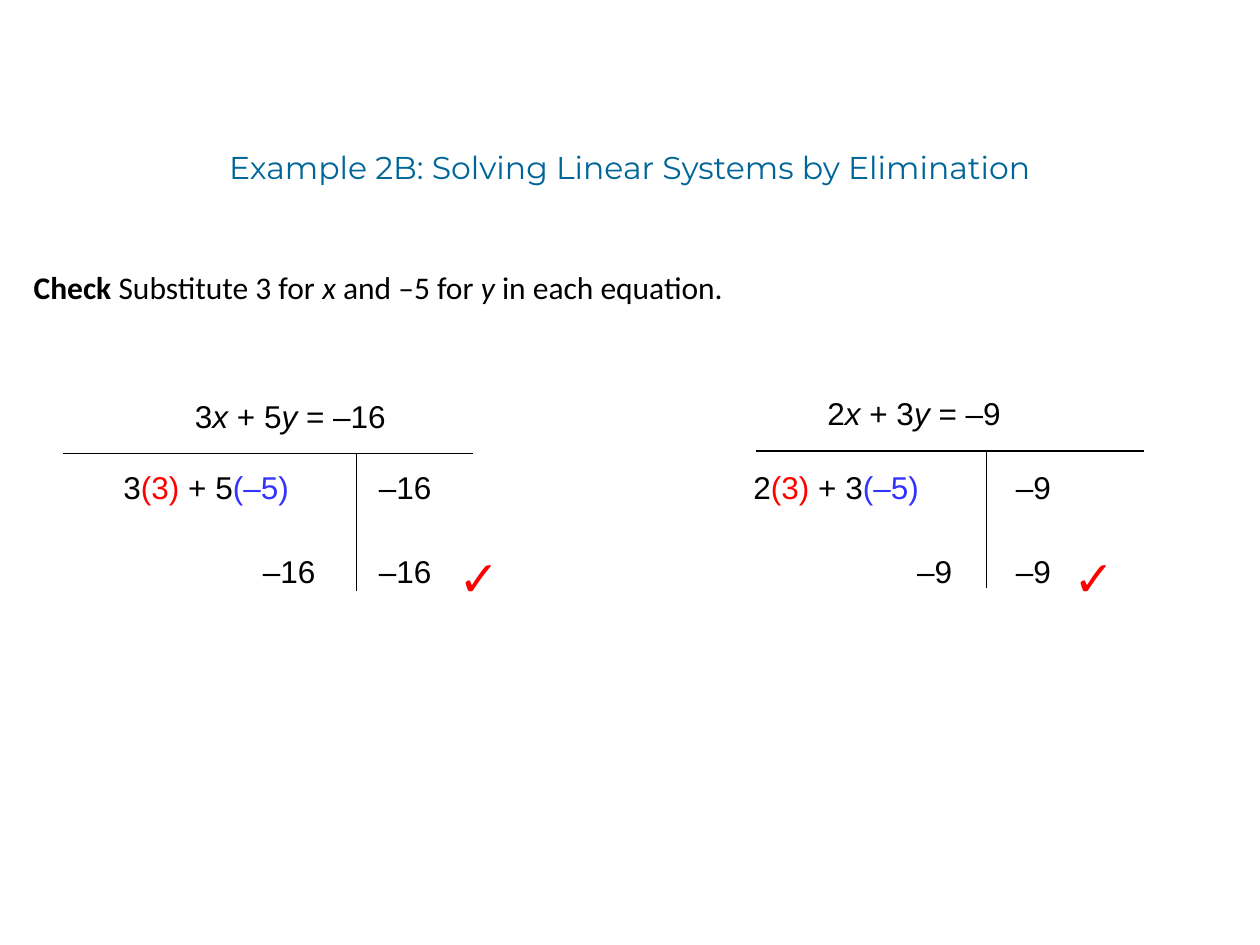
from dataclasses import dataclass

from lxml import etree
from pptx import Presentation
from pptx.dml.color import RGBColor
from pptx.enum.shapes import MSO_CONNECTOR
from pptx.enum.text import MSO_ANCHOR, PP_ALIGN
from pptx.oxml.ns import qn
from pptx.util import Cm, Pt

STRAIGHT = MSO_CONNECTOR.STRAIGHT
TOP, MIDDLE = MSO_ANCHOR.TOP, MSO_ANCHOR.MIDDLE
LEFT, CENTER = PP_ALIGN.LEFT, PP_ALIGN.CENTER

BLACK, RED, BLUE, TEAL = "000000", "FF0000", "3333FF", "006699"
ROW_HEIGHT = 1.27
SUBSTITUTION_TOP, RESULT_TOP = 9.32, 11.0
DIVIDER_LENGTH = 2.77


@dataclass(frozen=True)
class Run:
    text: str
    color: str = BLACK
    bold: bool = False
    italic: bool = False


@dataclass(frozen=True)
class Check:
    """One equation checked in a T-shaped layout; lengths in centimetres."""
    x_factor: str
    y_factor: str
    constant: str
    equation_left: float
    equation_top: float
    bar_left: float
    bar_right: float
    bar_top: float
    divider: float
    substitution_left: float
    result_left: float
    constant_left: float
    constant_width: float
    tick_left: float


CHECKS = [
    Check("3", "5", "–16", 3.68, 7.87, 1.27, 9.53, 9.14, 7.19,
          2.24, 5.05, 7.39, 1.93, 8.99),
    Check("2", "3", "–9", 16.43, 7.82, 15.24, 23.06, 9.09, 19.89,
          14.94, 18.24, 20.23, 1.45, 21.39),
]


def rgb(color: str) -> RGBColor:
    return RGBColor.from_string(color)


def add_text(slide, runs: list[Run], left: float, top: float, width: float,
             height: float = ROW_HEIGHT, *, font: str = "Arial", size: int = 18,
             align=LEFT, anchor=TOP) -> None:
    box = slide.shapes.add_textbox(Cm(left), Cm(top), Cm(width), Cm(height))
    frame = box.text_frame
    frame.word_wrap = True
    frame.vertical_anchor = anchor
    paragraph = frame.paragraphs[0]
    paragraph.alignment = align
    for part in runs:
        run = paragraph.add_run()
        run.text = part.text
        run.font.name = font
        run.font.size = Pt(size)
        run.font.bold = part.bold
        run.font.italic = part.italic
        run.font.color.rgb = rgb(part.color)


def add_line(slide, x1: float, y1: float, x2: float, y2: float) -> None:
    line = slide.shapes.add_connector(STRAIGHT, Cm(x1), Cm(y1), Cm(x2), Cm(y2))
    line.line.color.rgb = rgb(BLACK)
    line.line.width = Pt(0.75)
    etree.SubElement(line._element.spPr, qn("a:effectLst"))


def add_check(slide, check: Check) -> None:
    equation = [Run(check.x_factor), Run("x", italic=True),
                Run(f" + {check.y_factor}"), Run("y", italic=True),
                Run(f" = {check.constant}")]
    substitution = [Run(check.x_factor), Run("(3)", RED),
                    Run(f" + {check.y_factor}"), Run("(–5)", BLUE)]
    constant = [Run(check.constant)]

    add_text(slide, equation, check.equation_left, check.equation_top, 5.64)
    add_line(slide, check.bar_left, check.bar_top, check.bar_right, check.bar_top)
    add_line(slide, check.divider, check.bar_top,
             check.divider, check.bar_top + DIVIDER_LENGTH)
    add_text(slide, substitution, check.substitution_left, SUBSTITUTION_TOP, 4.95)
    for left, top in [(check.constant_left, SUBSTITUTION_TOP),
                      (check.result_left, RESULT_TOP),
                      (check.constant_left, RESULT_TOP)]:
        add_text(slide, constant, left, top, check.constant_width)
    add_text(slide, [Run("✓", RED, bold=True)], check.tick_left, 10.91, 1.3, 1.45,
             size=28)


def main() -> None:
    deck = Presentation()
    deck.slide_width, deck.slide_height = Cm(25.4), Cm(19.05)
    slide = deck.slides.add_slide(deck.slide_layouts[6])

    add_text(slide, [Run("Example 2B: Solving Linear Systems by Elimination", TEAL)],
             0, 2.74, 25.4, font="Montserrat", align=CENTER, anchor=MIDDLE)
    instruction = [Run("Check ", bold=True), Run("Substitute 3 for "),
                   Run("x", italic=True), Run(" and –5 for "),
                   Run("y", italic=True), Run(" in each equation.")]
    add_text(slide, instruction, 0.43, 5.28, 24.64, font="Calibri")
    for check in CHECKS:
        add_check(slide, check)

    deck.save("out.pptx")


if __name__ == "__main__":
    main()
